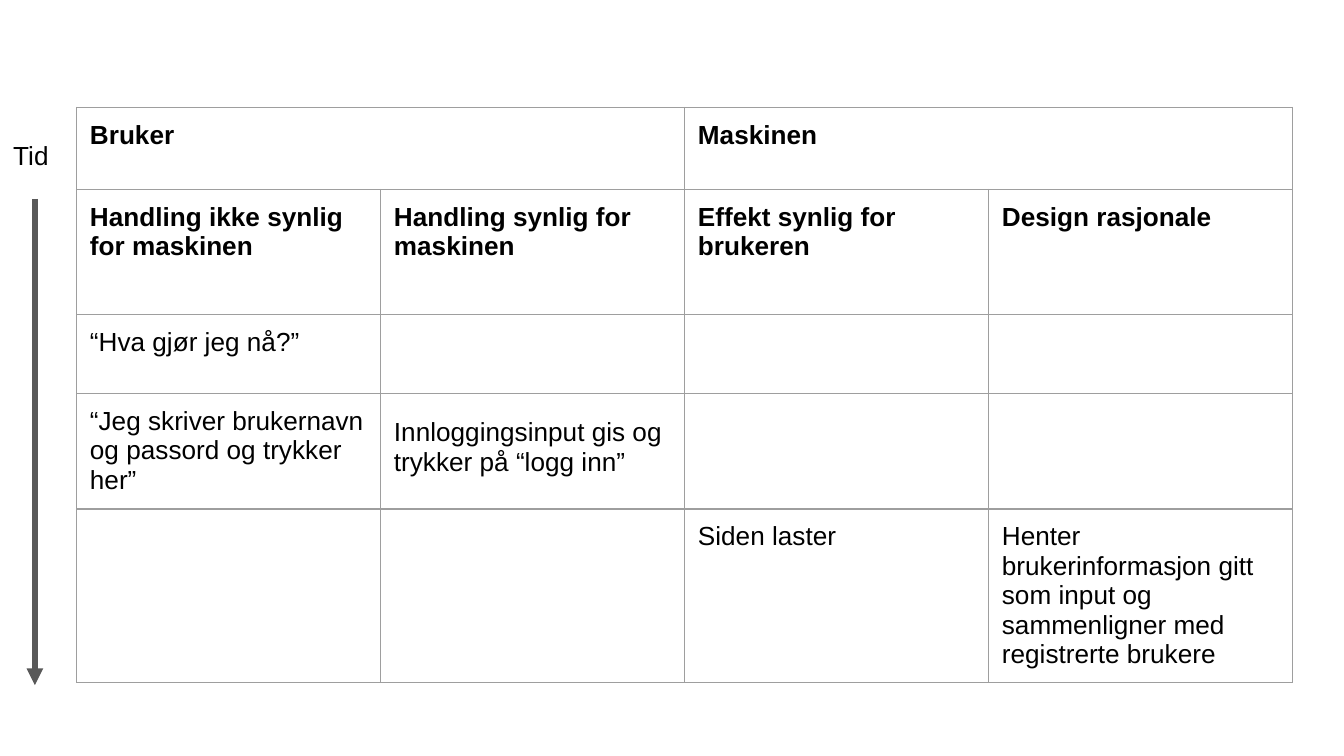
from dataclasses import dataclass

from lxml import etree
from pptx import Presentation
from pptx import util as u
from pptx.dml.color import RGBColor
from pptx.enum import shapes
from pptx.oxml import ns


@dataclass(frozen=True)
class Theme:
    font: str = "Arial"
    size: int = 14
    ink: str = "000000"
    grid: str = "9E9E9E"
    arrow: str = "595959"
    grid_width: float = 0.75
    arrow_width: float = 3
    inset: float = 0.25


THEME = Theme()
ROW_HEIGHTS = [1.55, 2.36, 1.5, 2.18, 3.28]
HEADER_ROWS = 2
STEPS = [
    ["Bruker", "", "Maskinen", ""],
    ["Handling ikke synlig for maskinen", "Handling synlig for maskinen",
     "Effekt synlig for brukeren", "Design rasjonale"],
    ["“Hva gjør jeg nå?”", "", "", ""],
    ["“Jeg skriver brukernavn og passord og trykker her”",
     "Innloggingsinput gis og trykker på “logg inn”", "", ""],
    ["", "", "Siden laster",
     "Henter brukerinformasjon gitt som input og sammenligner med registrerte brukere"],
]


def set_insets(holder):
    for side in ("left", "top", "right", "bottom"):
        setattr(holder, f"margin_{side}", u.Cm(THEME.inset))


def write(frame, words, bold=False):
    paragraph = frame.paragraphs[0]
    paragraph.text = words
    paragraph.font.name = THEME.font
    paragraph.font.size = u.Pt(THEME.size)
    paragraph.font.bold = bold
    paragraph.font.color.rgb = RGBColor.from_string(THEME.ink)


def add_borders(cell):
    properties = cell._tc.get_or_add_tcPr()
    for edge in ("lnL", "lnR", "lnT", "lnB"):
        border = etree.SubElement(properties, ns.qn(f"a:{edge}"), w=str(u.Pt(THEME.grid_width)))
        fill = etree.SubElement(border, ns.qn("a:solidFill"))
        etree.SubElement(fill, ns.qn("a:srgbClr"), val=THEME.grid)


def add_interaction_table(slide, left, top, width):
    frame = slide.shapes.add_table(len(STEPS), len(STEPS[0]), u.Cm(left), u.Cm(top),
                                   u.Cm(width), u.Cm(sum(ROW_HEIGHTS)))
    table = frame.table
    table.first_row = table.horz_banding = False
    for column in table.columns:
        column.width = u.Cm(width / len(STEPS[0]))
    for r, (height, step) in enumerate(zip(ROW_HEIGHTS, STEPS)):
        table.rows[r].height = u.Cm(height)
        for c, words in enumerate(step):
            cell = table.cell(r, c)
            set_insets(cell)
            add_borders(cell)
            cell.fill.background()
            write(cell.text_frame, words, bold=r < HEADER_ROWS)
    for first in (0, 2):
        table.cell(0, first).merge(table.cell(0, first + 1))
    table.cell(3, 1).margin_top = u.Cm(0.46)


def add_time_axis(slide, left, top, width, height):
    label = slide.shapes.add_textbox(u.Cm(left), u.Cm(top), u.Cm(width), u.Cm(0.69))
    label.text_frame.word_wrap = True
    set_insets(label.text_frame)
    write(label.text_frame, "Tid")

    middle = u.Cm(left + 0.66)
    arrow = slide.shapes.add_connector(shapes.MSO_CONNECTOR.STRAIGHT, middle,
                                       u.Cm(top + 1.37), middle, u.Cm(top + height))
    arrow.line.color.rgb = RGBColor.from_string(THEME.arrow)
    arrow.line.width = u.Pt(THEME.arrow_width)
    etree.SubElement(arrow.line._get_or_add_ln(), ns.qn("a:tailEnd"), type="triangle")
    etree.SubElement(arrow._element.spPr, ns.qn("a:effectLst"))


def main():
    deck = Presentation()
    deck.slide_width, deck.slide_height = u.Cm(25.4), u.Cm(14.29)
    slide = deck.slides.add_slide(deck.slide_layouts[6])
    add_interaction_table(slide, left=1.45, top=2.03, width=22.98)
    add_time_axis(slide, left=0, top=2.39, width=1.45, height=10.56)
    deck.save("out.pptx")


if __name__ == "__main__":
    main()
